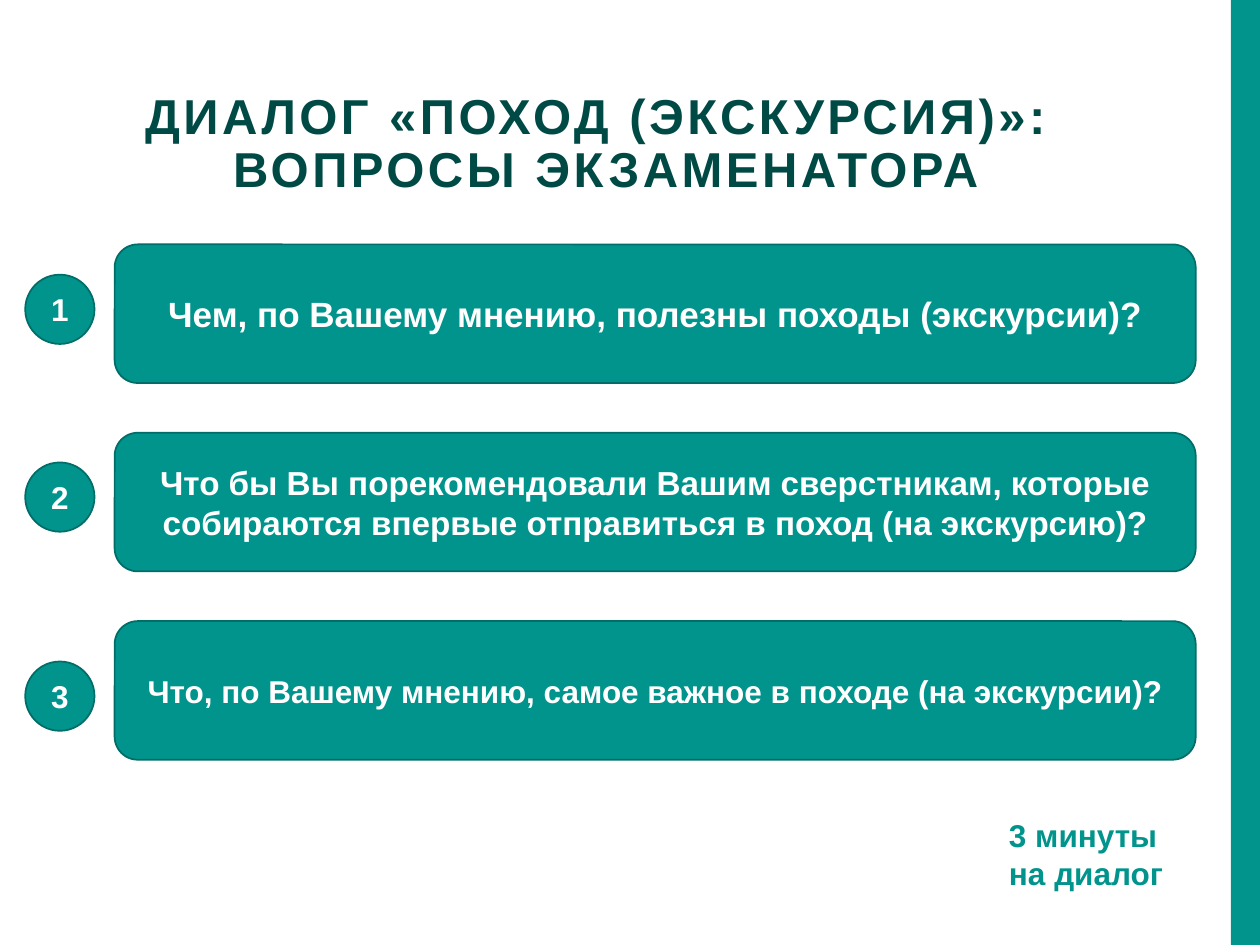
import pptx
import pptx.dml.color
import pptx.enum.shapes
import pptx.enum.text
import pptx.util
from dataclasses import dataclass

Inches = pptx.util.Inches
Pt = pptx.util.Pt
RGB = pptx.dml.color.RGBColor.from_string
SHAPE = pptx.enum.shapes.MSO_SHAPE
ALIGN = pptx.enum.text.PP_ALIGN
ANCHOR = pptx.enum.text.MSO_ANCHOR


@dataclass(frozen=True)
class Theme:
    font: str = "Arial"
    teal: str = "00948C"
    outline: str = "006D68"
    dark: str = "004A46"
    white: str = "FFFFFF"
    title_size: int = 28
    body_size: int = 18
    question_sizes: tuple = (20, 19, 18)


theme = Theme()


def write(frame, text, size=theme.body_size, color=theme.white,
          align=ALIGN.CENTER, anchor=ANCHOR.MIDDLE, line_spacing=None, tracking=0):
    """Fill a text frame; a newline starts a paragraph, \\v breaks a line."""
    frame.word_wrap = True
    frame.vertical_anchor = anchor
    frame.text = text
    for paragraph in frame.paragraphs:
        paragraph.alignment = align
        paragraph.line_spacing = line_spacing
        for run in paragraph.runs:
            run.font.name = theme.font
            run.font.size = Pt(size)
            run.font.bold = True
            run.font.color.rgb = RGB(color)
            if tracking:
                run.font._element.set("spc", str(tracking * 100))


def add_block(kind, left, top, width, height, outlined=True):
    block = slide.shapes.add_shape(
        kind, Inches(left), Inches(top), Inches(width), Inches(height))
    block.shadow.inherit = False
    block.fill.solid()
    block.fill.fore_color.rgb = RGB(theme.teal)
    if outlined:
        block.line.color.rgb = RGB(theme.outline)
        block.line.width = Pt(1)
    else:
        block.line.fill.background()
    return block


deck = pptx.Presentation()
deck.slide_width = Inches(10)
deck.slide_height = Inches(7.5)
slide = deck.slides.add_slide(deck.slide_layouts[6])

# Side stripe
add_block(SHAPE.RECTANGLE, 9.77, 0, 0.23, 7.5, outlined=False)

# Title
title = slide.shapes.add_textbox(Inches(0.91), Inches(0.68), Inches(7.8), Inches(1.1))
write(title.text_frame, "ДИАЛОГ «ПОХОД (ЭКСКУРСИЯ)»: \vВОПРОСЫ ЭКЗАМЕНАТОРА",
      size=theme.title_size, color=theme.dark, anchor=ANCHOR.TOP,
      line_spacing=0.9, tracking=2)

# Examiner's questions with their numbers
questions = [
    "Чем, по Вашему мнению, полезны походы (экскурсии)?",
    "Что бы Вы порекомендовали Вашим сверстникам, которые "
    "собираются впервые отправиться в поход (на экскурсию)?",
    "Что, по Вашему мнению, самое важное в походе (на экскурсии)?",
]
number_tops = [2.18, 3.67, 5.25]
first_top, row_step = 1.94, 1.495
for row, (question, size, number_top) in enumerate(
        zip(questions, theme.question_sizes, number_tops)):
    panel = add_block(SHAPE.ROUNDED_RECTANGLE, 0.91, first_top + row * row_step, 8.58, 1.1)
    write(panel.text_frame, question, size=size)
    number = add_block(SHAPE.OVAL, 0.2, number_top, 0.55, 0.55)
    write(number.text_frame, str(row + 1))

# Time limit
time_limit = slide.shapes.add_textbox(Inches(7.91), Inches(6.43), Inches(1.56), Inches(0.71))
write(time_limit.text_frame, "3 минуты\nна диалог", color=theme.teal,
      align=ALIGN.LEFT, anchor=ANCHOR.TOP)

deck.save("out.pptx")
